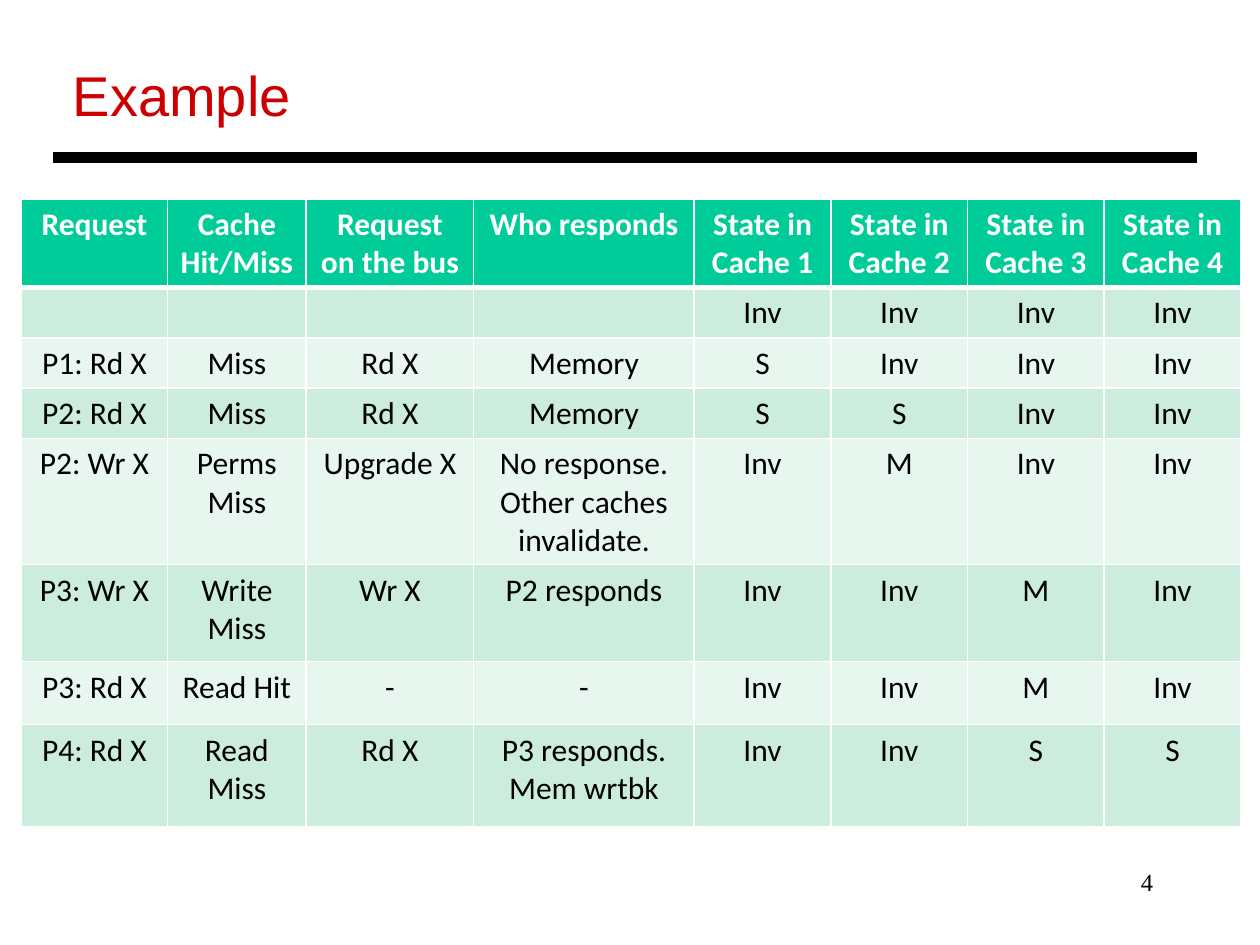
from lxml import etree
from pptx import Presentation
from pptx.dml.color import RGBColor
from pptx.enum.shapes import MSO_CONNECTOR
from pptx.enum.text import PP_ALIGN
from pptx.oxml.ns import qn
from pptx.util import Inches, Pt

STRAIGHT = MSO_CONNECTOR.STRAIGHT
LEFT, CENTER, RIGHT = PP_ALIGN.LEFT, PP_ALIGN.CENTER, PP_ALIGN.RIGHT

COLORS = {
    "title": "CC0000",
    "black": "000000",
    "white": "FFFFFF",
    "header": "00CC99",
    "band_dark": "CCECDE",
    "band_light": "E7F6EF",
}

TABLE_WIDTH = 9.68
REQUEST_WIDTHS = [1.16, 1.1, 1.33, 1.75]
# The four state columns share the remaining width
STATE_WIDTH = (TABLE_WIDTH - sum(REQUEST_WIDTHS)) / 4
COLUMN_WIDTHS = REQUEST_WIDTHS + [STATE_WIDTH] * 4
ROW_HEIGHTS = [0.7, 0.4, 0.4, 0.4, 1, 0.77, 0.5, 0.81]
HEADERS = ["Request", "Cache\nHit/Miss", "Request\non the bus", "Who responds"] + [
    f"State in Cache {number}" for number in range(1, 5)
]
ROWS = [
    ["", "", "", "", "Inv", "Inv", "Inv", "Inv"],
    ["P1: Rd X", "Miss", "Rd X", "Memory", "S", "Inv", "Inv", "Inv"],
    ["P2: Rd X", "Miss", "Rd X", "Memory", "S", "S", "Inv", "Inv"],
    ["P2: Wr X", "Perms Miss", "Upgrade X",
     "No response.\nOther caches invalidate.", "Inv", "M", "Inv", "Inv"],
    ["P3: Wr X", "Write Miss", "Wr X", "P2 responds", "Inv", "Inv", "M", "Inv"],
    ["P3: Rd X", "Read Hit", "-", "-", "Inv", "Inv", "M", "Inv"],
    ["P4: Rd X", "Read Miss", "Rd X", "P3 responds. Mem wrtbk",
     "Inv", "Inv", "S", "S"],
]


def write_text(text_frame, text, *, size, font, color, align=LEFT, bold=False):
    """Write one paragraph for each line of the text."""
    text_frame.text = text
    for paragraph in text_frame.paragraphs:
        paragraph.alignment = align
        paragraph.font.size = Pt(size)
        for run in paragraph.runs:
            run.font.size = Pt(size)
            run.font.name = font
            run.font.bold = bold
            run.font.color.rgb = RGBColor.from_string(COLORS[color])


def add_text(slide, left, top, width, height, text, wrap=True, **text_format):
    box = slide.shapes.add_textbox(
        Inches(left), Inches(top), Inches(width), Inches(height))
    box.text_frame.word_wrap = wrap
    write_text(box.text_frame, text, **text_format)


def add_border(cell, side, width):
    properties = cell._tc.get_or_add_tcPr()
    line = etree.SubElement(properties, qn(f"a:ln{side}"), w=str(Pt(width)))
    fill = etree.SubElement(line, qn("a:solidFill"))
    etree.SubElement(fill, qn("a:srgbClr"), val=COLORS["white"])


def format_cell(cell, row_index):
    is_header = row_index == 0
    # The rule between header and body is thicker than the others
    top_width = 3 if row_index == 1 else 1
    bottom_width = 3 if is_header else 1
    for side, width in (("L", 1), ("R", 1), ("T", top_width), ("B", bottom_width)):
        add_border(cell, side, width)
    band = "band_dark" if row_index % 2 else "band_light"
    cell.fill.solid()
    cell.fill.fore_color.rgb = RGBColor.from_string(
        COLORS["header" if is_header else band])


def add_heading(slide, left, top, width):
    # Title
    add_text(slide, left + 0.06, top, 1.95, 0.64, "Example", wrap=False,
             size=32, font="Arial", color="title")
    # Rule under the title
    rule_top = Inches(top + 0.82)
    rule = slide.shapes.add_connector(
        STRAIGHT, Inches(left), rule_top, Inches(left + width), rule_top)
    rule.line.width = Pt(6)
    rule.line.color.rgb = RGBColor.from_string(COLORS["black"])
    etree.SubElement(rule._element.spPr, qn("a:effectLst"))


def add_coherence_table(slide, left, top):
    table = slide.shapes.add_table(
        len(ROW_HEIGHTS), len(COLUMN_WIDTHS), Inches(left), Inches(top),
        Inches(TABLE_WIDTH), Inches(sum(ROW_HEIGHTS))).table
    for column, width in zip(table.columns, COLUMN_WIDTHS):
        column.width = Inches(width)
    for row, height in zip(table.rows, ROW_HEIGHTS):
        row.height = Inches(height)
    for row_index, texts in enumerate([HEADERS] + ROWS):
        is_header = row_index == 0
        for column_index, text in enumerate(texts):
            cell = table.cell(row_index, column_index)
            format_cell(cell, row_index)
            write_text(cell.text_frame, text, size=18, font="Calibri",
                       color="white" if is_header else "black",
                       align=CENTER, bold=is_header)


def add_slide_number(slide, left, top, width, height):
    add_text(slide, left, top, width, height, "4", size=14,
             font="Times New Roman", color="black", align=RIGHT)


def main():
    presentation = Presentation()
    presentation.slide_width = Inches(10)
    presentation.slide_height = Inches(7.5)
    slide = presentation.slides.add_slide(presentation.slide_layouts[6])
    add_slide_number(slide, 7.17, 6.83, 2.08, 0.5)
    add_heading(slide, 0.42, 0.43, 9.08)
    add_coherence_table(slide, 0.17, 1.58)
    presentation.save("out.pptx")


if __name__ == "__main__":
    main()
